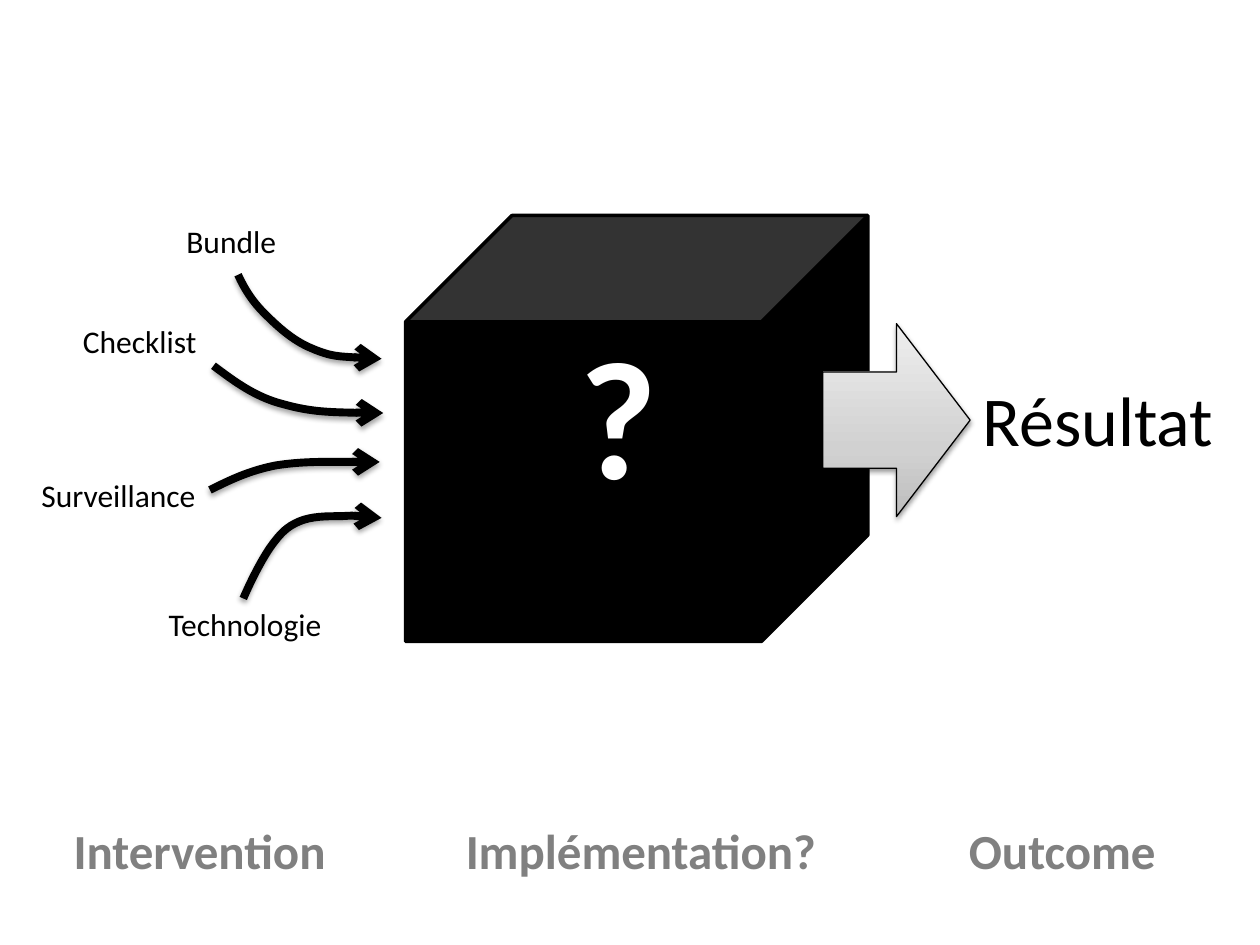
import copy

import pptx
import pptx.dml.color
import pptx.enum.shapes
import pptx.enum.text
import pptx.oxml
import pptx.oxml.ns
import pptx.util
from pptx.util import Pt

RGB = pptx.dml.color.RGBColor
BLACK = RGB(0x00, 0x00, 0x00)
WHITE = RGB(0xFF, 0xFF, 0xFF)
GREY = RGB(0x80, 0x80, 0x80)
METAL = [(0, RGB(0xBD, 0xBD, 0xBD)), (0.35, RGB(0xD1, 0xD1, 0xD1)), (1, RGB(0xEE, 0xEE, 0xEE))]
FONT = "Calibri"
SHAPE = pptx.enum.shapes.MSO_SHAPE
ALIGN = pptx.enum.text.PP_ALIGN
qn = pptx.oxml.ns.qn


def add_element(parent, xml):
    namespace = pptx.oxml.ns.nsdecls("a")
    parent.append(pptx.oxml.parse_xml(xml.replace(">", f" {namespace}>", 1)))


class Sketch:
    """Draws on one slide; all lengths are in points."""

    def __init__(self, slide):
        self.shapes = slide.shapes

    def outline(self, shape, weight):
        shape.shadow.inherit = False
        shape.line.color.rgb = BLACK
        shape.line.width = Pt(weight)

    def soft_shadow(self, shape, distance, opacity):
        effects = shape._element.spPr.find(qn("a:effectLst"))
        add_element(
            effects,
            f'<a:outerShdw blurRad="{Pt(3.1)}" dist="{Pt(distance)}" dir="5400000" rotWithShape="0">'
            f'<a:srgbClr val="{BLACK}"><a:alpha val="{opacity * 1000}"/></a:srgbClr></a:outerShdw>',
        )

    def block(self, kind, left, top, width, height, weight):
        shape = self.shapes.add_shape(kind, Pt(left), Pt(top), Pt(width), Pt(height))
        self.outline(shape, weight)
        return shape

    def gradient(self, shape, stops):
        """Fill from bottom to top with (position, colour) stops."""
        shape.fill.gradient()
        shape.fill.gradient_angle = 90
        stop_list = shape._element.spPr.find(qn("a:gradFill")).find(qn("a:gsLst"))
        while len(stop_list) < len(stops):
            stop_list.append(copy.deepcopy(stop_list[-1]))
        for stop, (position, colour) in zip(shape.fill.gradient_stops, stops):
            stop.color.rgb = colour
            stop.position = position

    def curved_arrow(self, start, *controls):
        """Bézier arrow: after the start, every three points make one segment."""
        builder = self.shapes.build_freeform(Pt(start[0]), Pt(start[1]))
        builder.add_line_segments([(Pt(x), Pt(y)) for x, y in controls], close=False)
        arrow = builder.convert_to_shape()
        route = next(arrow._element.iter(qn("a:path")))
        steps = route.findall(qn("a:lnTo"))
        for first in range(0, len(steps), 3):
            add_element(route, "<a:cubicBezTo></a:cubicBezTo>")
            for step in steps[first:first + 3]:
                route[-1].append(step[0])
                route.remove(step)
        arrow.fill.background()
        self.outline(arrow, 4.5)
        add_element(arrow.line._get_or_add_ln(), '<a:tailEnd type="arrow"></a:tailEnd>')
        self.soft_shadow(arrow, 1.8, 35)

    def text(self, words, left, top, width, height, size, colour=BLACK, bold=False, align=ALIGN.LEFT):
        box = self.shapes.add_textbox(Pt(left), Pt(top), Pt(width), Pt(height))
        frame = box.text_frame
        frame.word_wrap = False
        frame.auto_size = pptx.enum.text.MSO_AUTO_SIZE.SHAPE_TO_FIT_TEXT
        paragraph = frame.paragraphs[0]
        paragraph.text = words
        paragraph.alignment = align
        paragraph.font.name = FONT
        paragraph.font.size = Pt(size)
        paragraph.font.bold = bold
        paragraph.font.color.rgb = colour


def main():
    deck = pptx.Presentation()
    deck.slide_width, deck.slide_height = Pt(720), Pt(540)
    sketch = Sketch(deck.slides.add_slide(deck.slide_layouts[6]))

    black_box = sketch.block(SHAPE.CUBE, 231.8, 123.1, 264.2, 243.4, 2)
    black_box.fill.solid()
    black_box.fill.fore_color.rgb = BLACK

    input_routes = [
        [(136, 157), (139.7, 165), (144, 172), (151, 179), (158, 186), (167, 194.5),
         (178, 199), (189.5, 204), (204, 204.5), (218, 205)],
        [(139, 342), (144, 330.5), (150, 319), (155, 312), (160.5, 304.5), (164, 301),
         (171, 298), (178, 295), (187, 295), (195, 295), (203, 294.5), (210, 295), (218, 296)],
        [(120, 280), (132, 274), (142.5, 269), (157.5, 266), (173, 263.5), (201, 264), (217, 264)],
        [(122, 209), (134, 218), (146, 227), (162, 231), (178, 235.5), (199, 236), (219, 236)],
    ]
    for route in input_routes:
        sketch.curved_arrow(*route)

    output_arrow = sketch.block(SHAPE.RIGHT_ARROW, 470.2, 185, 84.2, 110.2, 0.75)
    sketch.gradient(output_arrow, METAL)
    sketch.soft_shadow(output_arrow, 1.6, 38)

    sketch.text("Résultat", 554.4, 211.7, 147.6, 55.4, 40)
    for name, left, top, width in [
        ("Bundle", 99.4, 123.1, 66.2),
        ("Checklist", 40.3, 180.7, 79.9),
        ("Surveillance", 16.6, 268.6, 103.7),
        ("Technologie", 89.3, 342, 103),
    ]:
        sketch.text(name, left, top, width, 28.8, 18)
    sketch.text("?", 324, 174.2, 59.8, 123.8, 96, WHITE, bold=True)

    for stage, left, width in [
        ("Intervention", 33.8, 160.6),
        ("Outcome", 545.8, 122.4),
        ("Implémentation?", 257.8, 216.7),
    ]:
        sketch.text(stage, left, 465.1, width, 41, 28, GREY, bold=True, align=ALIGN.CENTER)

    deck.save("out.pptx")


if __name__ == "__main__":
    main()
